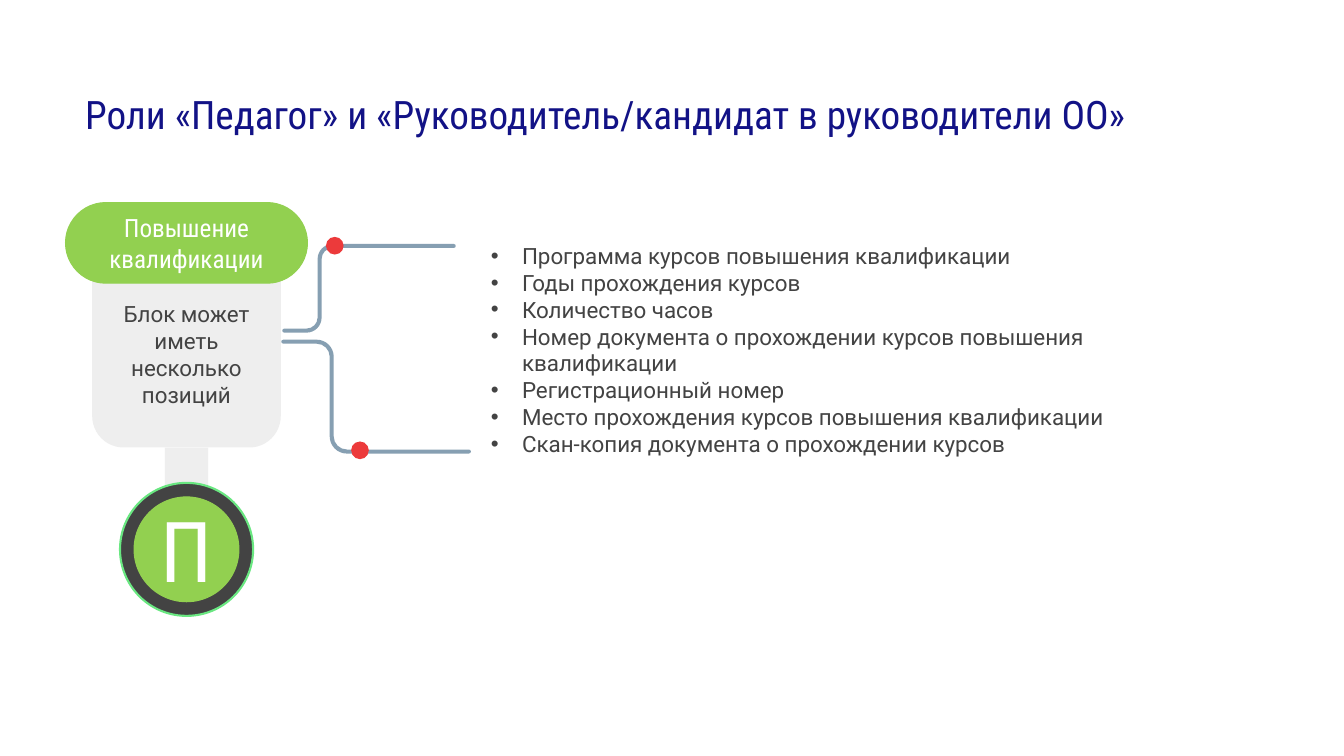
from dataclasses import dataclass
from math import cos, radians, sin, tan

from lxml.etree import SubElement as Sub
from pptx import Presentation
from pptx.dml.color import RGBColor as RGB
from pptx.enum.shapes import MSO_SHAPE as Kind
from pptx.enum.text import MSO_ANCHOR as Anchor, MSO_AUTO_SIZE as Fit, PP_ALIGN as Align
from pptx.oxml.ns import qn
from pptx.util import Inches, Pt


@dataclass(frozen=True)
class Theme:
    body: str = "Roboto"
    head: str = "Roboto Condensed"
    navy: str = "121286"
    dark: str = "434343"
    pale: str = "EEEEEE"
    green: str = "92D050"
    mint: str = "69E781"
    steel: str = "869FB2"
    red: str = "EC3A3B"
    white: str = "FFFFFF"
    title: int = 28
    label: int = 18
    text: int = 16
    mark: int = 60


T = Theme()
MID = 18.5  # column on which the card is centred
ITEMS = [
    "Программа курсов повышения квалификации",
    "Годы прохождения курсов",
    "Количество часов",
    "Номер документа о прохождении курсов повышения квалификации",
    "Регистрационный номер",
    "Место прохождения курсов повышения квалификации",
    "Скан-копия документа о прохождении курсов",
]


def cell(n):
    """Length of n grid cells; ten cells make an inch."""
    return Inches(n / 10)


def paint(shape, fill, line=None, width=0.75):
    shape.shadow.inherit = False
    shape.fill.solid()
    shape.fill.fore_color.rgb = RGB.from_string(fill)
    if line:
        shape.line.color.rgb = RGB.from_string(line)
        shape.line.width = Pt(width)
    else:
        shape.line.fill.background()


def style(par, font, size, color, align=Align.LEFT):
    par.alignment = align
    par.font.name, par.font.size = font, Pt(size)
    par.font.color.rgb = RGB.from_string(color)


def pad(frame, left, top, right, bottom):
    frame.margin_left, frame.margin_top = cell(left), cell(top)
    frame.margin_right, frame.margin_bottom = cell(right), cell(bottom)


def block(shapes, kind, mid, top, wide, high, fill, line=None, width=0.75):
    """Preset shape centred on column mid."""
    shape = shapes.add_shape(kind, cell(mid - wide / 2), cell(top), cell(wide), cell(high))
    paint(shape, fill, line, width)
    return shape


def write(shape, text, font, size, color, pads=(1, 1, 1, 1)):
    frame = shape.text_frame
    frame.word_wrap, frame.vertical_anchor = True, Anchor.MIDDLE
    frame.text = text
    pad(frame, *pads)
    style(frame.paragraphs[0], font, size, color, Align.CENTER)


def arc(x, y, r, start, end, flip):
    """Start, two handles and end of a curve, mirrored when flip is -1."""
    a, b = radians(start), radians(end)
    k = 4 / 3 * tan((b - a) / 4)
    dots = [
        (cos(a), sin(a)),
        (cos(a) - k * sin(a), sin(a) + k * cos(a)),
        (cos(b) + k * sin(b), sin(b) - k * cos(b)),
        (cos(b), sin(b)),
    ]
    return [(cell(x + r * u), cell(y + flip * r * v)) for u, v in dots]


def curve(shape):
    """Turn the last three of every four outline points into one curve."""
    outline = next(shape._element.iter(qn("a:path")))
    steps = list(outline)[:-1]
    for i in range(0, len(steps), 4):
        bend = Sub(outline, qn("a:cubicBezTo"))
        steps[i].addnext(bend)
        for step in steps[i + 1:i + 4]:
            bend.append(step[0])
            outline.remove(step)


def pipe(shapes, left, start, bend, right, end, r, half=0.2):
    """Rounded step from (left, start) through column bend to (right, end)."""
    flip = 1 if end > start else -1
    one = (bend - r, start + flip * r)
    two = (bend + r, end - flip * r)
    arcs = [
        (*one, r + half, -90, 0),
        (*two, r - half, 180, 90),
        (right, end, half, -90, 90),
        (*two, r + half, 90, 180),
        (*one, r - half, 0, -90),
        (left, start, half, 90, 270),
    ]
    dots = [dot for part in arcs for dot in arc(*part, flip)]
    form = shapes.build_freeform(*dots[0], scale=1.0)
    form.add_line_segments(dots[1:], close=True)
    shape = form.convert_to_shape()
    curve(shape)
    paint(shape, T.steel)


def bullets(shapes, left, top, wide, high, items):
    frame = shapes.add_textbox(cell(left), cell(top), cell(wide), cell(high)).text_frame
    frame.word_wrap, frame.auto_size = True, Fit.SHAPE_TO_FIT_TEXT
    frame.text = "\n".join(items)
    for par in frame.paragraphs:
        style(par, T.body, T.text, T.dark)
        props = par._p.get_or_add_pPr()
        props.set("marL", str(cell(3.1)))
        props.set("indent", str(-cell(3.1)))
        Sub(props, qn("a:buFont"), typeface="Arial")
        Sub(props, qn("a:buChar"), char="•")


def heading(title, text):
    title.left, title.top = cell(7.14), cell(7.8)
    title.width, title.height = cell(122.4), cell(7)
    frame = title.text_frame
    frame.text = text
    frame.word_wrap, frame.vertical_anchor = True, Anchor.MIDDLE
    pad(frame, 1.3, 1.3, 1.3, 1.3)
    style(frame.paragraphs[0], T.head, T.title, T.navy)


def card(shapes):
    """Pill, panel, stem and round badge on one axis."""
    block(shapes, Kind.RECTANGLE, MID, 44.4, 4.3, 11.1, T.pale)
    panel = block(shapes, Kind.ROUNDED_RECTANGLE, MID, 20.1, 18.7, 24.3, T.pale)
    write(panel, "Блок может иметь несколько позиций", T.body, T.text, T.dark, (0, 6.7, 0, 1))
    pill = block(shapes, Kind.ROUNDED_RECTANGLE, MID, 20.1, 24, 8, T.green, T.green)
    pill.adjustments[0] = 0.5
    write(pill, "Повышение квалификации", T.head, T.label, T.white)
    block(shapes, Kind.OVAL, MID, 47.9, 13.2, 13.2, T.dark, T.mint, 1.5)
    badge = block(shapes, Kind.OVAL, MID, 49.3, 10.4, 10.4, T.green, T.green)
    write(badge, "П", T.head, T.mark, T.white)


def main():
    deck = Presentation()
    deck.slide_width, deck.slide_height = Inches(13.33), Inches(7.5)
    slide = deck.slides.add_slide(deck.slide_layouts[5])
    shapes = slide.shapes

    heading(shapes.title, "Роли «Педагог» и «Руководитель/кандидат в руководители ОО»")
    card(shapes.add_group_shape().shapes)
    bullets(shapes, 47.7, 23.53, 66.7, 22.6, ITEMS)

    # Pipes from the card to the list, each with a red dot
    pipe(shapes, 28.1, 33.9, 32.9, 46.5, 44.8, 1.5)
    pipe(shapes, 28.2, 32.8, 31.7, 45, 24.4, 1.3)
    for mid, top in ((35.7, 43.8), (33.2, 23.5)):
        block(shapes, Kind.OVAL, mid, top, 1.75, 1.75, T.red)

    deck.save("out.pptx")


if __name__ == "__main__":
    main()
